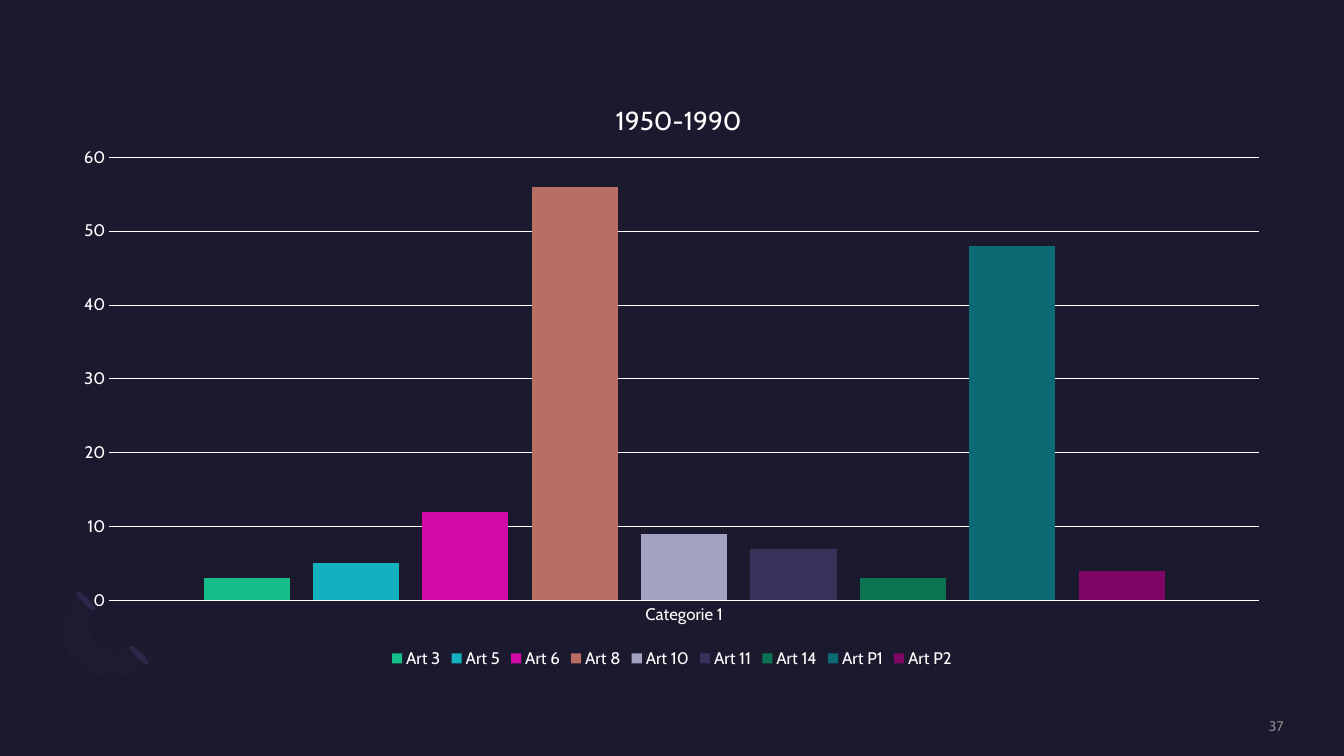
"""Build a dark slide with a clustered column chart of articles, 1950-1990."""
from lxml.etree import SubElement
from pptx import Presentation
from pptx.chart.data import CategoryChartData
from pptx.dml.color import RGBColor
from pptx.enum.chart import XL_CHART_TYPE as ChartType
from pptx.enum.chart import XL_LEGEND_POSITION as LegendPosition
from pptx.enum.chart import XL_TICK_MARK as TickMark
from pptx.enum.shapes import MSO_SHAPE as Shape
from pptx.enum.text import MSO_ANCHOR as Anchor
from pptx.enum.text import PP_ALIGN as Align
from pptx.oxml.ns import qn
from pptx.util import Inches, Pt

NIGHT = RGBColor(0x1B, 0x19, 0x2E)
RING = RGBColor(0x1D, 0x1B, 0x31)
RING_END = RGBColor(0x2C, 0x28, 0x4A)
WHITE = RGBColor(0xFF, 0xFF, 0xFF)
GREY = RGBColor(0xA6, 0xA6, 0xA6)

ARTICLES = [
    ("Art 3", 3, RGBColor(0x13, 0xBE, 0x89)),
    ("Art 5", 5, RGBColor(0x12, 0xB1, 0xBF)),
    ("Art 6", 12, RGBColor(0xD4, 0x0A, 0xA8)),
    ("Art 8", 56, RGBColor(0xB8, 0x6E, 0x62)),
    ("Art 10", 9, RGBColor(0xA3, 0xA3, 0xC1)),
    ("Art 11", 7, RGBColor(0x37, 0x33, 0x5B)),
    ("Art 14", 3, RGBColor(0x0B, 0x72, 0x52)),
    ("Art P1", 48, RGBColor(0x0B, 0x6A, 0x73)),
    ("Art P2", 4, RGBColor(0x7F, 0x06, 0x65)),
]
OUTER_CURVES = [
    [(1.52, 6.54), (1.3, 6.76), (0.95, 6.79), (0.76, 6.59)],
    [(0.76, 6.59), (0.56, 6.39), (0.58, 6.05), (0.81, 5.82)],
]
INNER_CURVES = [
    [(0.99, 6), (0.87, 6.11), (0.86, 6.29), (0.96, 6.38)],
    [(0.96, 6.38), (1.06, 6.48), (1.23, 6.47), (1.35, 6.36)],
]


def curve_points(curve, steps=12):
    """Return points along a cubic curve, in inches."""
    points = []
    for step in range(steps + 1):
        t = step / steps
        weights = ((1 - t) ** 3, 3 * t * (1 - t) ** 2, 3 * t * t * (1 - t), t ** 3)
        points.append(tuple(
            sum(weight * point[axis] for weight, point in zip(weights, curve))
            for axis in (0, 1)))
    return points


def format_font(font, size=12, color=WHITE, name="Cabin"):
    """Apply the font face, size and colour, without bold."""
    font.name, font.size, font.bold = name, Pt(size), False
    font.color.rgb = color


def write_text(frame, text, align=None, **style):
    """Write one paragraph with the given alignment and font style."""
    para = frame.paragraphs[0]
    para.alignment = align
    span = para.add_run()
    span.text = text
    format_font(span.font, **style)
    return span


def place(parent, index, inner=False, **fractions):
    """Give a chart element a manual layout in fractions of the chart."""
    for old in parent.findall(qn("c:layout")):
        parent.remove(old)
    layout = SubElement(parent, qn("c:layout"))
    parent.insert(index, layout)
    manual = SubElement(layout, qn("c:manualLayout"))
    if inner:
        SubElement(manual, qn("c:layoutTarget")).set("val", "inner")
    for mode in ("xMode", "yMode"):
        SubElement(manual, qn(f"c:{mode}")).set("val", "edge")
    for key, value in fractions.items():
        SubElement(manual, qn(f"c:{key}")).set("val", str(value))


class ChartPage:
    """Hold the slide and draw its elements in one style."""

    def __init__(self, deck):
        """Add a blank page with the dark background."""
        self.page = deck.slides.add_slide(deck.slide_layouts[6])
        self.page.background.fill.solid()
        self.page.background.fill.fore_color.rgb = NIGHT

    def paint(self, shape, color):
        """Fill a shape flat, with no line or shadow."""
        shape.shadow.inherit = False
        shape.fill.solid()
        shape.fill.fore_color.rgb = color
        shape.line.fill.background()

    def ring(self):
        """Draw the open ring and its two end caps."""
        points = [(Inches(x), Inches(y))
                  for curve in OUTER_CURVES + INNER_CURVES
                  for x, y in curve_points(curve)]
        builder = self.page.shapes.build_freeform(*points[0])
        builder.add_line_segments(points[1:], close=True)
        self.paint(builder.convert_to_shape(), RING)
        for left, top in ((1.35, 6.37), (0.82, 5.83)):
            cap = self.page.shapes.add_shape(
                Shape.OVAL, Inches(left), Inches(top), Inches(0.06), Inches(0.26))
            cap.rotation = 135
            self.paint(cap, RING_END)

    def columns(self, title, category, articles):
        """Draw the column chart with one series per article."""
        data = CategoryChartData()
        data.categories = [category]
        for name, count, _ in articles:
            data.add_series(name, [count])
        chart = self.page.shapes.add_chart(
            ChartType.COLUMN_CLUSTERED, Inches(0.6), Inches(0.73),
            Inches(12.13), Inches(5.94), data).chart
        format_font(chart.font, size=10)
        chart.has_title = True
        write_text(chart.chart_title.text_frame, title, size=18.6)
        chart.chart_title.include_in_layout = False
        place(chart.chart_title._element, 1, x=0.45, y=0.04)

        plot = chart.plots[0]
        plot.vary_by_categories = False
        plot.gap_width, plot.overlap = 219, -27
        for series, (_, _, color) in zip(plot.series, articles):
            series.format.fill.solid()
            series.format.fill.fore_color.rgb = color
        place(chart._chartSpace.chart.plotArea, 0, inner=True,
              x=0.04, y=0.14, w=0.94, h=0.74)

        counts = chart.value_axis
        counts.minimum_scale, counts.maximum_scale, counts.major_unit = 0, 60, 10
        counts.format.line.fill.background()
        for axis in (chart.category_axis, counts):
            axis.major_tick_mark = axis.minor_tick_mark = TickMark.NONE
            format_font(axis.tick_labels.font)
        for line in (chart.category_axis.format.line,
                     counts.major_gridlines.format.line):
            line.color.rgb = WHITE
            line.width = Pt(0.75)

        chart.has_legend = True
        chart.legend.position = LegendPosition.BOTTOM
        chart.legend.include_in_layout = False
        format_font(chart.legend.font)

    def page_number(self, number):
        """Write the page number at the lower right."""
        box = self.page.shapes.add_textbox(
            Inches(10.88), Inches(7.12), Inches(1.85), Inches(0.17))
        frame = box.text_frame
        frame.word_wrap = True
        frame.vertical_anchor = Anchor.MIDDLE
        frame.margin_left = frame.margin_right = 0
        frame.margin_top = frame.margin_bottom = 0
        span = write_text(frame, number, align=Align.RIGHT, size=10, color=GREY)
        color = span._r.find(".//" + qn("a:srgbClr"))
        SubElement(color, qn("a:alpha")).set("val", "80000")


def main():
    """Build the deck and save it."""
    deck = Presentation()
    deck.slide_width, deck.slide_height = Inches(13.33), Inches(7.5)
    page = ChartPage(deck)
    page.ring()
    page.columns("1950-1990", "Categorie 1", ARTICLES)
    page.page_number("37")
    deck.save("out.pptx")


if __name__ == "__main__":
    main()
